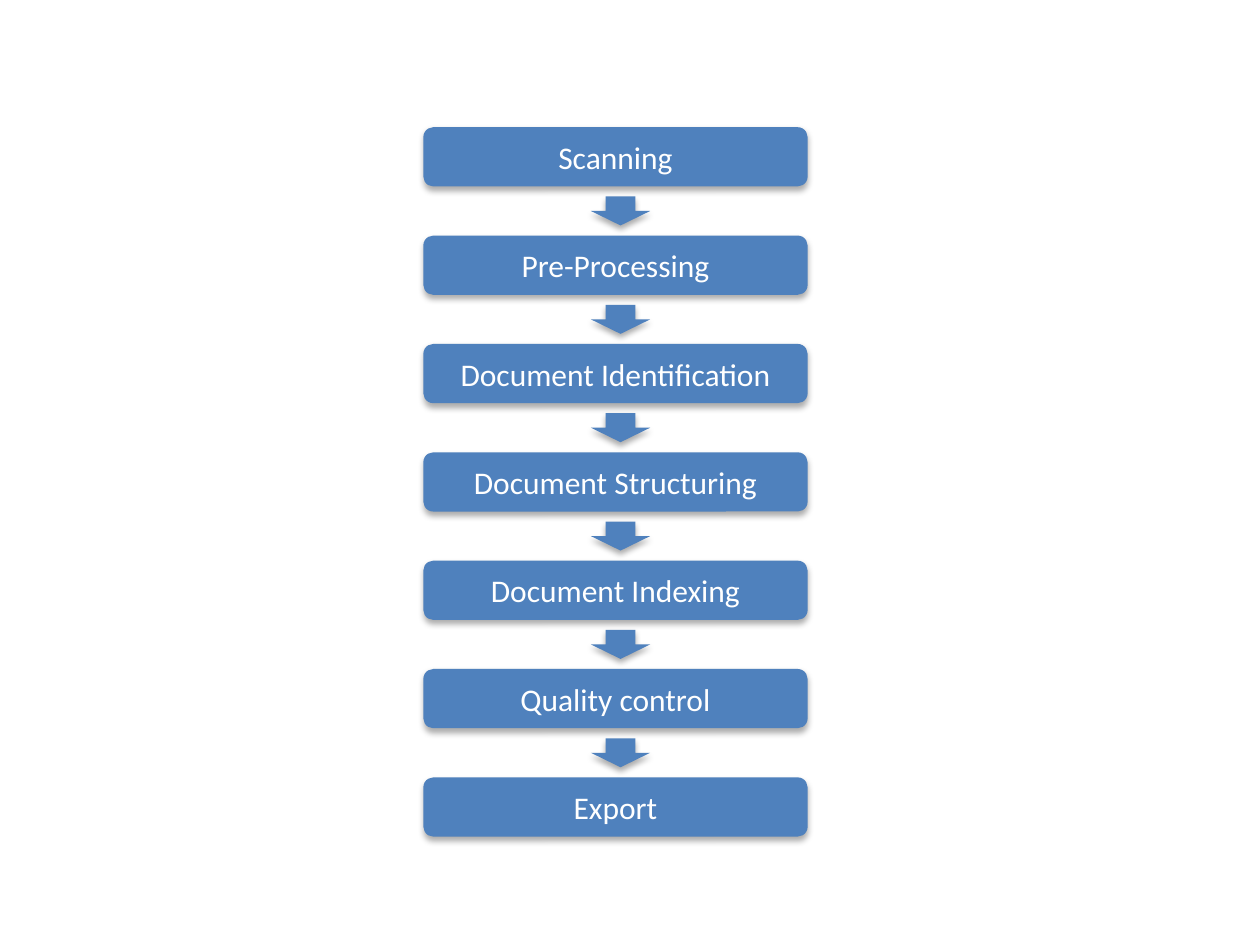
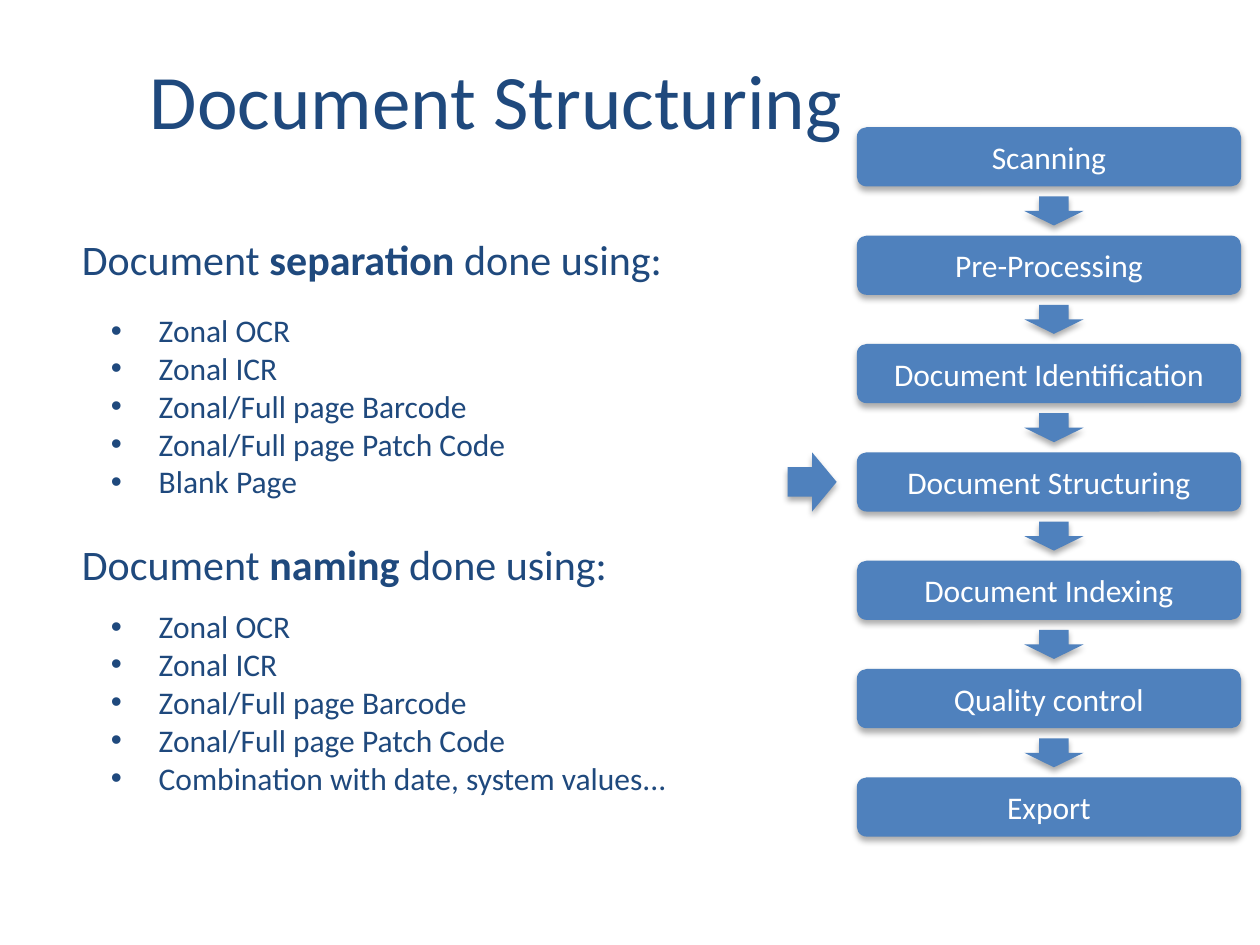
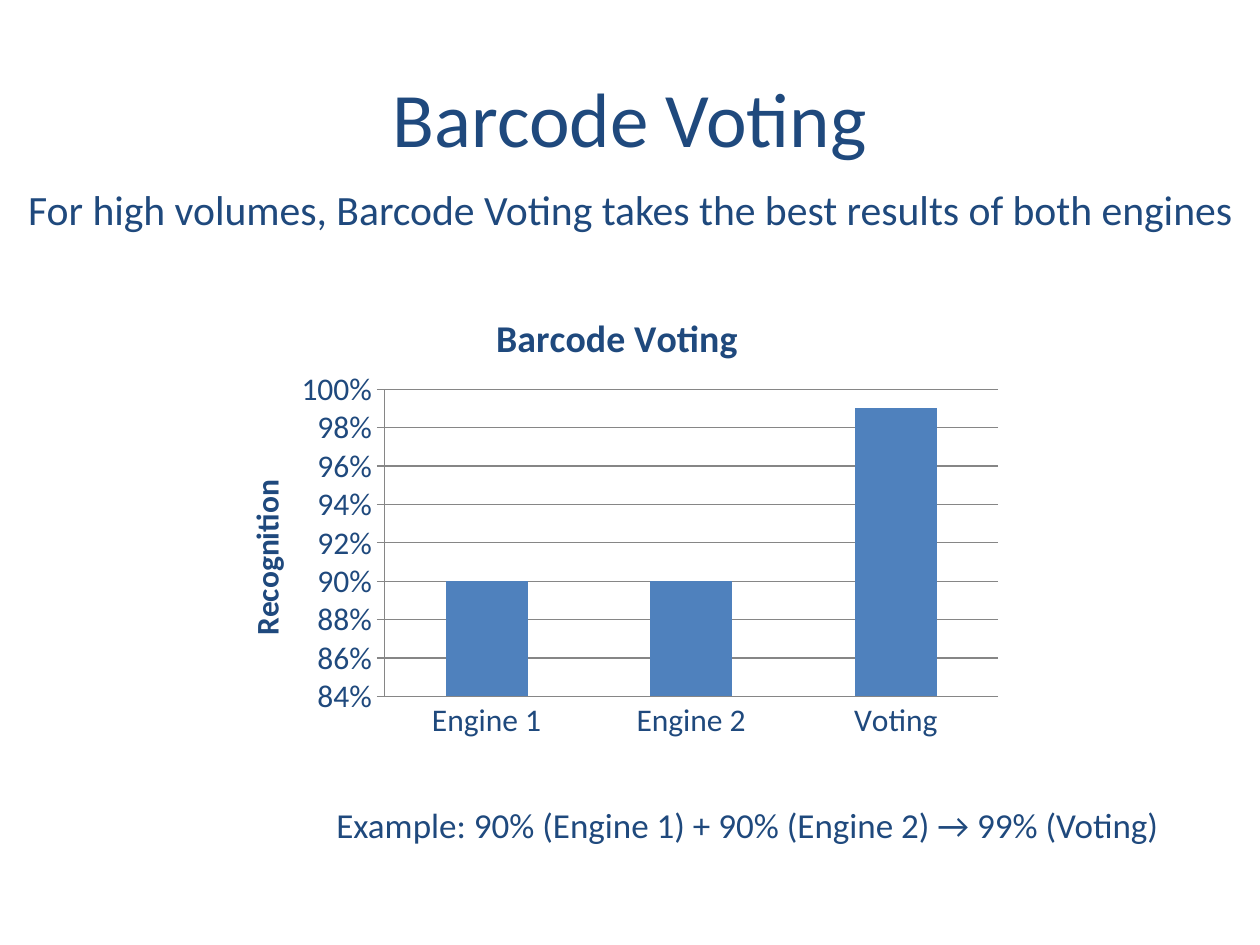
import pptx
import pptx.chart.data
import pptx.dml.color
import pptx.enum.chart
import pptx.enum.shapes
import pptx.enum.text
import pptx.oxml
import pptx.oxml.ns
import pptx.util
from pptx.util import Inches

Pt = pptx.util.Pt
qn = pptx.oxml.ns.qn
SHAPES = pptx.enum.shapes.MSO_SHAPE
ALIGN = pptx.enum.text.PP_ALIGN
ANCHOR = pptx.enum.text.MSO_ANCHOR
NO_FIT = pptx.enum.text.MSO_AUTO_SIZE.NONE
TICK = pptx.enum.chart.XL_TICK_MARK

FONT = "Calibri"
NAVY, BLUE, WHITE, GREY = "1F497D", "4F81BD", "FFFFFF", "868686"
BOX_SHADOW = {"blur": 3.5, "distance": 2.2, "angle": 90, "alpha": 32}
TITLE_SHADOW = {"blur": 3, "distance": 3, "angle": 45, "alpha": 43}

TITLE_ONLY, CONTENT, COMPARISON, BLANK = 5, 1, 4, 6
STEPS = ["Scanning", "Pre-Processing", "Document Identification",
         "Document Structuring", "Document Indexing", "Quality control", "Export"]
STEP_TOP, STEP_PITCH, STEP_WIDTH, STEP_HEIGHT = 1.01, 0.86, 3.05, 0.47
SOURCES = ["Zonal OCR", "Zonal ICR", "Zonal/Full page Barcode",
           "Zonal/Full page Patch Code"]


def color(hex_text):
    return pptx.dml.color.RGBColor.from_string(hex_text)


def apply(target, values):
    for name, value in values.items():
        setattr(target, name, value)


def set_font(font, size, hex_text=NAVY, bold=False):
    apply(font, {"name": FONT, "size": Pt(size), "bold": bold})
    font.color.rgb = color(hex_text)


def add_shadow(effects, blur, distance, angle, alpha):
    shadow = pptx.oxml.parse_xml(
        f'<a:outerShdw {pptx.oxml.ns.nsdecls("a")} blurRad="{Pt(blur)}" '
        f'dist="{Pt(distance)}" dir="{angle * 60000}" rotWithShape="0">'
        f'<a:srgbClr val="000000"><a:alpha val="{alpha * 1000}"/></a:srgbClr>'
        '</a:outerShdw>')
    effects.append(shadow)


def place_in_chart(element, **fractions):
    """Fix a chart part at fractions of the chart area."""
    modes = {"xMode": "edge", "yMode": "edge", **fractions}
    target = '<c:layoutTarget val="inner"/>' if "w" in fractions else ""
    entries = "".join(f'<c:{key} val="{value}"/>' for key, value in modes.items())
    layout = pptx.oxml.parse_xml(
        f'<c:layout {pptx.oxml.ns.nsdecls("c")}><c:manualLayout>{target}{entries}'
        '</c:manualLayout></c:layout>')
    for old in element.findall(qn("c:layout")):
        element.remove(old)
    text = element.find(qn("c:tx"))
    if text is None:
        element.insert(0, layout)
    else:
        text.addnext(layout)


class Deck:
    def __init__(self):
        self.deck = pptx.Presentation()
        apply(self.deck, {"slide_width": Inches(10), "slide_height": Inches(7.5)})
        self.page = None

    def new_page(self, layout):
        self.page = self.deck.slides.add_slide(self.deck.slide_layouts[layout])

    def text(self, box, at, paragraphs, size, align=ALIGN.LEFT,
             anchor=ANCHOR.TOP, bullet=False):
        """Fill a box; a paragraph is a string or a list of (text, bold)."""
        apply(box, dict(zip(("left", "top", "width", "height"), map(Inches, at))))
        frame = box.text_frame
        apply(frame, {"word_wrap": True, "auto_size": NO_FIT, "vertical_anchor": anchor})
        for index, spans in enumerate(paragraphs):
            para = frame.add_paragraph() if index else frame.paragraphs[0]
            apply(para, {"alignment": align, "space_before": Pt(0)})
            props = para._p.get_or_add_pPr()
            indent = Inches(0.38) if bullet else 0
            props.set("marL", str(indent))
            props.set("indent", str(-indent))
            mark = "a:buChar" if bullet else "a:buNone"
            element = pptx.oxml.parse_xml(f'<{mark} {pptx.oxml.ns.nsdecls("a")}/>')
            if bullet:
                element.set("char", "•")
            props.append(element)
            for words, bold in [(spans, False)] if isinstance(spans, str) else spans:
                span = para.add_run()
                span.text = words
                set_font(span.font, size, bold=bold)

    def title(self, words, at, align=ALIGN.LEFT):
        box = self.page.shapes.title
        self.text(box, at, [words], 44, align, ANCHOR.MIDDLE)
        props = box.text_frame.paragraphs[0].runs[0]._r.rPr
        effects = pptx.oxml.parse_xml(f'<a:effectLst {pptx.oxml.ns.nsdecls("a")}/>')
        add_shadow(effects, **TITLE_SHADOW)
        props.find(qn("a:solidFill")).addnext(effects)

    def body(self, index, at, paragraphs, size, **options):
        self.text(self.page.placeholders[index], at, paragraphs, size, **options)

    def note(self, at, words, size, **options):
        box = self.page.shapes.add_textbox(*map(Inches, at))
        self.text(box, at, [words], size, **options)

    def block(self, kind, at, words=""):
        shape = self.page.shapes.add_shape(kind, *map(Inches, at))
        shape.fill.solid()
        shape.fill.fore_color.rgb = color(BLUE)
        shape.line.fill.background()
        shape.shadow.inherit = False
        add_shadow(shape._element.spPr.find(qn("a:effectLst")), **BOX_SHADOW)
        if words:
            para = shape.text_frame.paragraphs[0]
            para.alignment = ALIGN.CENTER
            span = para.add_run()
            span.text = words
            set_font(span.font, 18, WHITE)

    def workflow(self, left, current=None):
        """Draw the chain of steps, with a pointer at the current one."""
        for index, step in enumerate(STEPS):
            top = STEP_TOP + index * STEP_PITCH
            self.block(SHAPES.ROUNDED_RECTANGLE,
                       (left, top, STEP_WIDTH, STEP_HEIGHT), step)
            if index < len(STEPS) - 1:
                self.block(SHAPES.DOWN_ARROW, (left + 1.33, top + 0.55, 0.47, 0.23))
            if step == current:
                self.block(SHAPES.RIGHT_ARROW, (left - 0.55, top, 0.39, STEP_HEIGHT))

    def column_chart(self, at, title, axis_title, values):
        data = pptx.chart.data.CategoryChartData(number_format="0%")
        data.categories = list(values)
        data.add_series("Series 1", list(values.values()))
        chart = self.page.shapes.add_chart(
            pptx.enum.chart.XL_CHART_TYPE.COLUMN_CLUSTERED,
            *map(Inches, at), data).chart
        chart.has_legend = False
        set_font(chart.font, 18)

        plot = chart.plots[0]
        apply(plot, {"gap_width": 150, "vary_by_categories": False})
        fill = plot.series[0].format.fill
        fill.solid()
        fill.fore_color.rgb = color(BLUE)

        category, value = chart.category_axis, chart.value_axis
        category.major_tick_mark = TICK.NONE
        apply(value, {"minimum_scale": 0.84, "maximum_scale": 1, "major_unit": 0.02,
                      "major_tick_mark": TICK.CROSS, "has_major_gridlines": True})
        apply(value.tick_labels, {"number_format": "0%", "number_format_is_linked": False})
        for part in (category, value, value.major_gridlines):
            part.format.line.color.rgb = color(GREY)
            part.format.line.width = Pt(0.75)

        headings = ((chart.chart_title, title, 21.6, {"x": 0.35, "y": 0.06}),
                    (value.axis_title, axis_title, 18, {"x": 0.04, "y": 0.42}))
        for heading, words, size, spot in headings:
            heading.text_frame.text = words
            set_font(heading.text_frame.paragraphs[0].runs[0].font, size, bold=True)
            place_in_chart(heading._element, **spot)
        place_in_chart(chart._chartSpace.chart.plotArea, x=0.22, y=0.24, w=0.76, h=0.65)


def main():
    deck = Deck()

    # Workflow overview
    deck.new_page(BLANK)
    deck.workflow(3.36)

    # Document structuring
    deck.new_page(COMPARISON)
    deck.workflow(6.8, current="Document Structuring")
    deck.title("Document Structuring", (1.09, 0.16, 5.7, 1.25))
    sections = (("separation", 1.8, 2.42, "Blank Page"),
                ("naming", 4.22, 4.77, "Combination with date, system values..."))
    for number, (topic, heading_top, list_top, last) in enumerate(sections):
        heading = [("Document ", False), (topic, True), (" done using:", False)]
        deck.body(2 * number + 1, (0.55, heading_top, 5.16, 0.62), [heading], 24)
        deck.body(2 * number + 2, (0.78, list_top, 5, 1.8), SOURCES + [last], 18,
                  bullet=True)

    # Barcode voting
    deck.new_page(CONTENT)
    deck.title("Barcode Voting", (0.5, 0.3, 9, 1.25), ALIGN.CENTER)
    deck.body(1, (0, 1.41, 10, 0.7),
              ["For high volumes, Barcode Voting takes the best results of both engines"],
              23.8, align=ALIGN.CENTER)
    deck.column_chart((1.64, 2.19, 6.41, 3.75), "Barcode Voting", "Recognition",
                      {"Engine 1": 0.9, "Engine 2": 0.9, "Voting": 0.99})
    deck.note((2.42, 6.33, 7.03, 0.86),
              "Example: 90% (Engine 1) + 90% (Engine 2) → 99% (Voting)", 20,
              align=ALIGN.CENTER)

    deck.deck.save("out.pptx")


if __name__ == "__main__":
    main()
